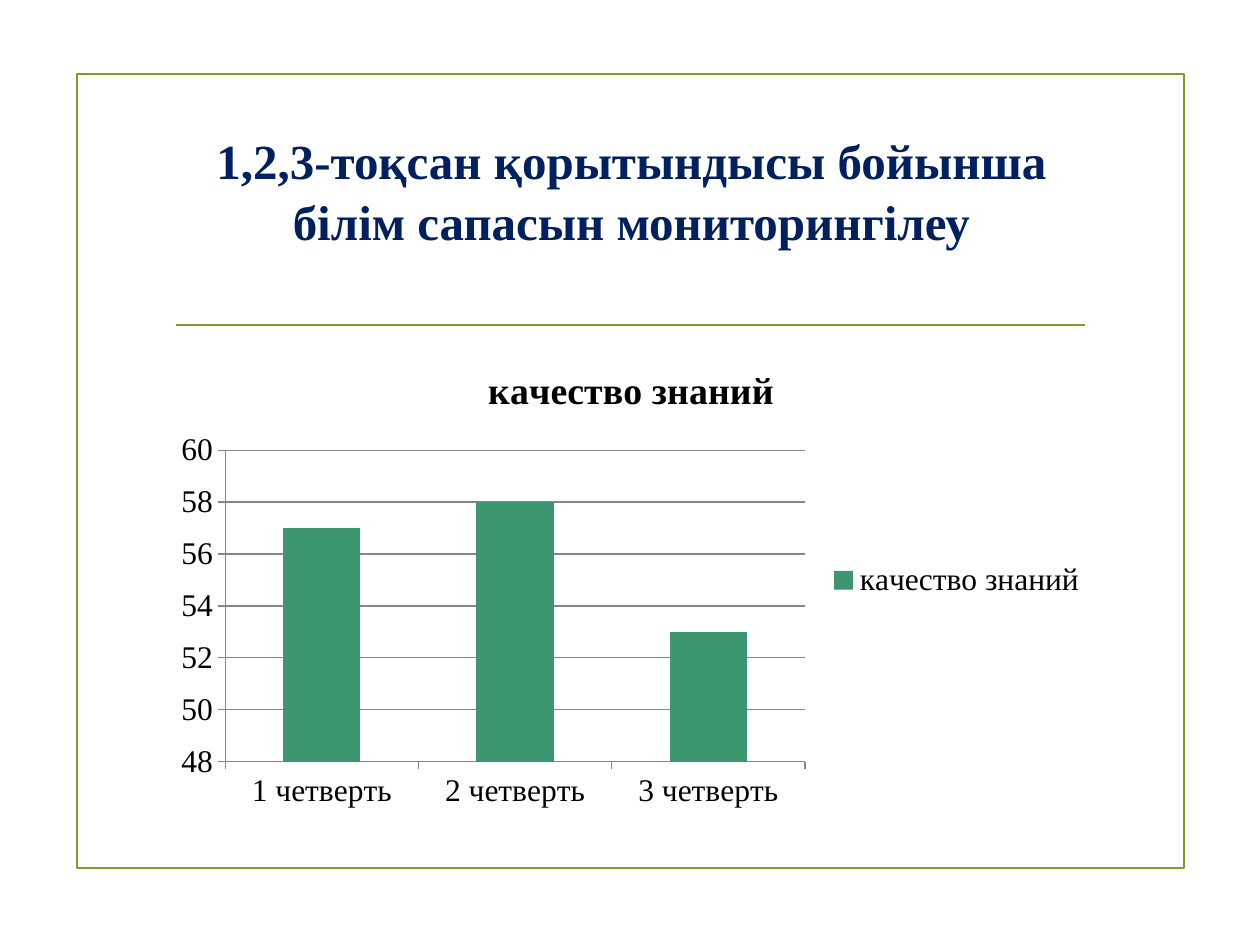
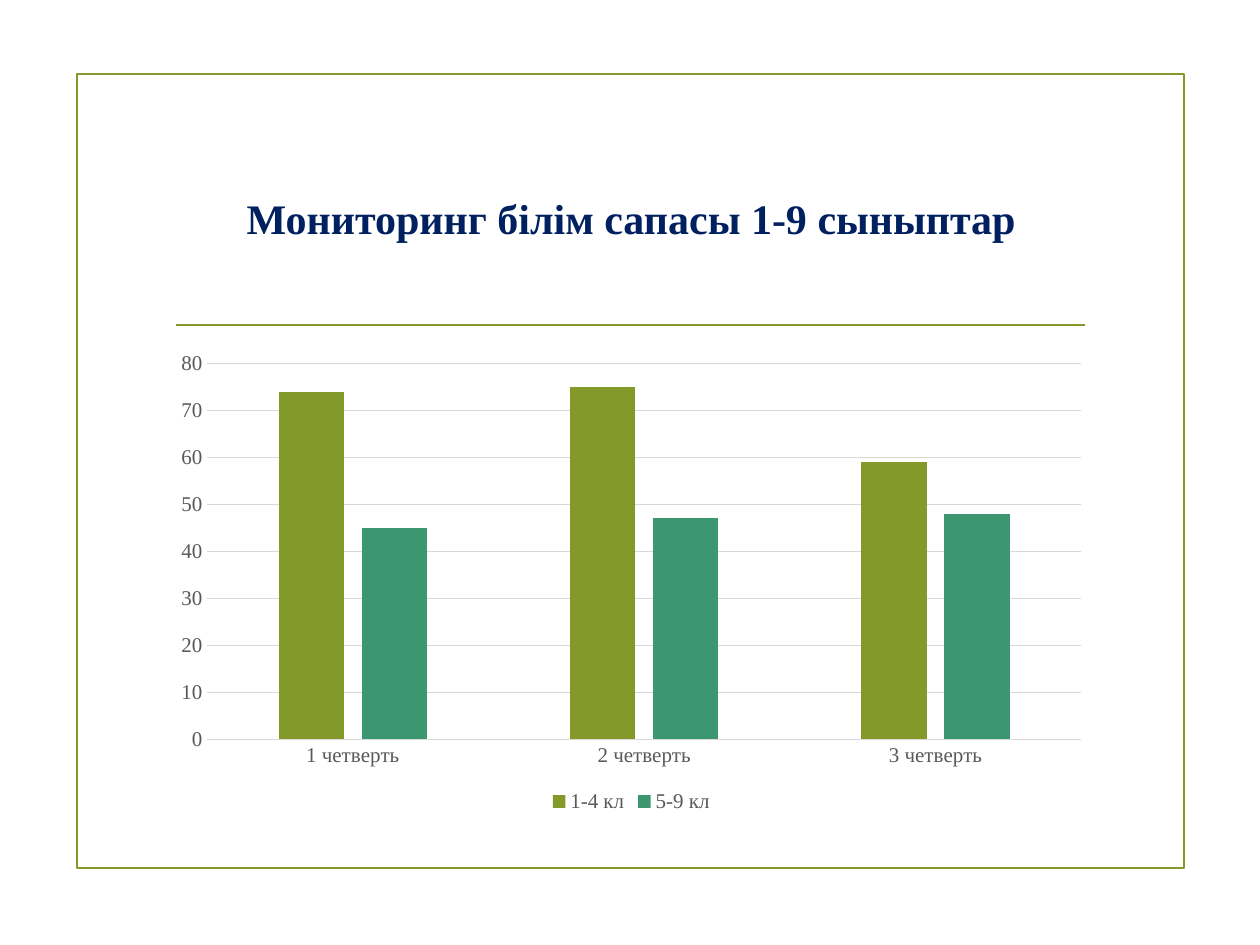
from dataclasses import dataclass

from lxml.etree import SubElement
from pptx import Presentation
from pptx.chart.data import CategoryChartData
from pptx.dml.color import RGBColor
from pptx.enum.chart import XL_CHART_TYPE, XL_LEGEND_POSITION, XL_TICK_MARK
from pptx.enum.shapes import MSO_CONNECTOR, MSO_SHAPE
from pptx.enum.text import MSO_ANCHOR, MSO_AUTO_SIZE, PP_ALIGN
from pptx.oxml.ns import qn
from pptx.util import Inches, Pt


@dataclass(frozen=True)
class Theme:
    font: str = "Times New Roman"
    navy: RGBColor = RGBColor(0x00, 0x20, 0x60)
    olive: RGBColor = RGBColor(0x83, 0x99, 0x2A)
    green: RGBColor = RGBColor(0x3C, 0x97, 0x70)
    black: RGBColor = RGBColor(0x00, 0x00, 0x00)
    text_gray: RGBColor = RGBColor(0x59, 0x59, 0x59)
    axis_gray: RGBColor = RGBColor(0x86, 0x86, 0x86)
    grid_gray: RGBColor = RGBColor(0xD9, 0xD9, 0xD9)
    large_title: float = 28
    title: float = 24
    chart_title: float = 21.6
    large_chart_text: float = 18
    chart_text: float = 12
    rule_width: float = 1.25
    axis_width: float = 0.75


THEME = Theme()
QUARTERS = ["1 четверть", "2 четверть", "3 четверть"]


def set_attributes(target, values):
    for name, value in values.items():
        setattr(target, name, value)


class Deck:
    def __init__(self, theme):
        self.theme = theme
        self.presentation = Presentation()
        self.presentation.slide_width = Inches(10)
        self.presentation.slide_height = Inches(7.5)
        self.slide = None

    def add_slide(self, title, size, bottom_inset=0.05):
        layout = self.presentation.slide_layouts[5]
        self.slide = self.presentation.slides.add_slide(layout)
        self.add_frame()
        self.add_rule()
        self.set_title(title, size, bottom_inset)

    def style_font(self, font, size, color, bold=False):
        set_attributes(font, {"name": self.theme.font, "size": Pt(size), "bold": bold})
        font.color.rgb = color

    def style_line(self, line, color, width):
        line.color.rgb = color
        line.width = Pt(width)

    def add_frame(self):
        frame = self.slide.shapes.add_shape(
            MSO_SHAPE.RECTANGLE, Inches(0.61), Inches(0.59), Inches(8.79), Inches(6.3))
        frame.shadow.inherit = False
        frame.fill.background()
        self.style_line(frame.line, self.theme.olive, self.theme.rule_width)

    def add_rule(self):
        rule = self.slide.shapes.add_connector(
            MSO_CONNECTOR.STRAIGHT, Inches(1.4), Inches(2.58), Inches(8.61), Inches(2.58))
        self.style_line(rule.line, self.theme.olive, self.theme.rule_width)
        SubElement(rule._element.spPr, qn("a:effectLst"))

    def set_title(self, text, size, bottom_inset):
        title = self.slide.shapes.title
        set_attributes(title, {
            "left": Inches(1.29), "top": Inches(1),
            "width": Inches(7.44), "height": Inches(1.43)})
        set_attributes(title.text_frame, {
            "text": text, "word_wrap": True, "auto_size": MSO_AUTO_SIZE.NONE,
            "vertical_anchor": MSO_ANCHOR.MIDDLE, "margin_bottom": Inches(bottom_inset)})
        paragraph = title.text_frame.paragraphs[0]
        set_attributes(paragraph, {"alignment": PP_ALIGN.CENTER, "line_spacing": 1.05})
        self.style_font(paragraph.runs[0].font, size, self.theme.navy, True)

    def add_column_chart(self, series, text_size, text_color, line_color, scale,
                         tick_mark, legend_position, gap, overlap=0, title=None):
        chart_data = CategoryChartData()
        chart_data.categories = QUARTERS
        for name, values, _ in series:
            chart_data.add_series(name, values)
        chart = self.slide.shapes.add_chart(
            XL_CHART_TYPE.COLUMN_CLUSTERED, Inches(1.29), Inches(2.72),
            Inches(7.44), Inches(3.77), chart_data).chart
        self.style_font(chart.font, text_size, text_color)
        chart.has_title = title is not None
        if title:
            chart.chart_title.text_frame.text = title
            run = chart.chart_title.text_frame.paragraphs[0].runs[0]
            self.style_font(run.font, self.theme.chart_title, text_color, True)
        chart.has_legend = True
        set_attributes(chart.legend, {"position": legend_position, "include_in_layout": False})
        plot = chart.plots[0]
        set_attributes(plot, {
            "gap_width": gap, "overlap": overlap, "vary_by_categories": False})
        for column, (_, _, color) in zip(plot.series, series):
            column.format.fill.solid()
            column.format.fill.fore_color.rgb = color
        self.style_axes(chart, line_color, scale, tick_mark)

    def style_axes(self, chart, line_color, scale, tick_mark):
        for axis in (chart.category_axis, chart.value_axis):
            set_attributes(axis, {
                "major_tick_mark": tick_mark, "minor_tick_mark": XL_TICK_MARK.NONE})
            self.style_line(axis.format.line, line_color, self.theme.axis_width)
        value_axis = chart.value_axis
        minimum, maximum, step = scale
        set_attributes(value_axis, {
            "minimum_scale": minimum, "maximum_scale": maximum,
            "major_unit": step, "has_major_gridlines": True})
        self.style_line(value_axis.major_gridlines.format.line, line_color,
                        self.theme.axis_width)
        if tick_mark == XL_TICK_MARK.NONE:
            value_axis.format.line.fill.background()


def main():
    deck = Deck(THEME)

    deck.add_slide("1,2,3-тоқсан қорытындысы бойынша білім сапасын мониторингілеу",
                   THEME.large_title, bottom_inset=0.48)
    deck.add_column_chart(
        [("качество знаний", (57, 58, 53), THEME.green)],
        THEME.large_chart_text, THEME.black, THEME.axis_gray, (48, 60, 2),
        XL_TICK_MARK.OUTSIDE, XL_LEGEND_POSITION.RIGHT, gap=150,
        title="качество знаний")

    deck.add_slide("Мониторинг білім сапасы 1-9 сыныптар", THEME.title)
    deck.add_column_chart(
        [("1-4 кл", (74, 75, 59), THEME.olive), ("5-9 кл", (45, 47, 48), THEME.green)],
        THEME.chart_text, THEME.text_gray, THEME.grid_gray, (0, 80, 10),
        XL_TICK_MARK.NONE, XL_LEGEND_POSITION.BOTTOM, gap=219, overlap=-27)

    deck.presentation.save("out.pptx")


if __name__ == "__main__":
    main()
